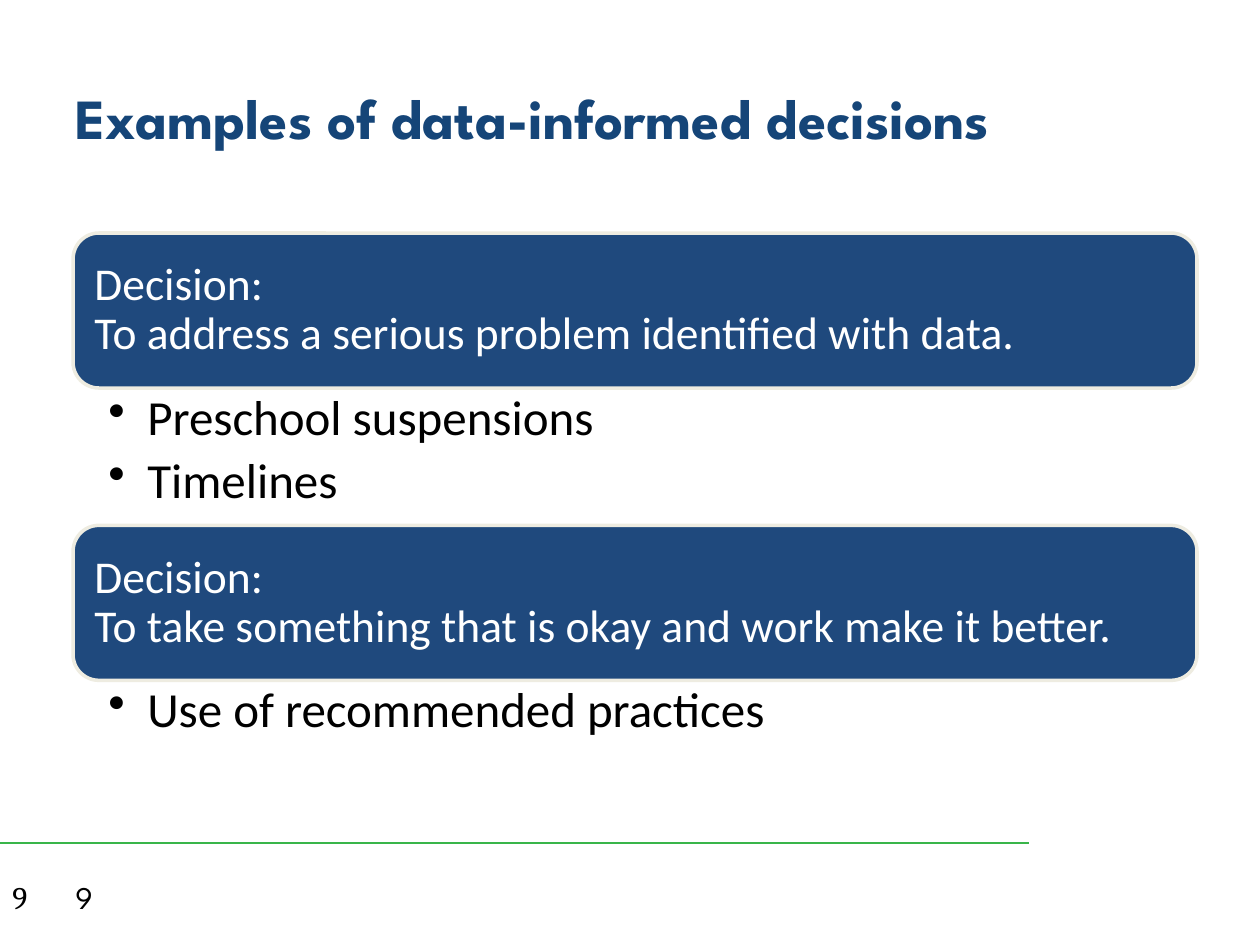
from lxml.etree import SubElement
from pptx import Presentation
from pptx.dml.color import RGBColor
from pptx.enum.shapes import MSO_CONNECTOR, MSO_SHAPE
from pptx.enum.text import MSO_ANCHOR, PP_ALIGN
from pptx.oxml.ns import qn
from pptx.util import Inches, Pt

TITLE = "Examples of data-informed decisions"
DECISIONS = [
    ("To address a serious problem identified with data.",
     ["Preschool suspensions", "Timelines"]),
    ("To take something that is okay and work make it better.",
     ["Use of recommended practices"]),
]
PAGE_NUMBERS = [(0.5, "League Spartan"), (0, "Cambria")]

NAVY, TITLE_BLUE, CREAM, GREEN = "1F497D", "154578", "EEECE1", "39B54A"
WHITE, BLACK = "FFFFFF", "000000"
LEFT, TOP, WIDTH = 0.58, 1.85, 8.92
BAR_HEIGHT, LIST_HEIGHT = 1.23, 1.09


def rgb(color):
    return RGBColor.from_string(color)


def set_font(paragraph, name, size, color, bold=False):
    font = paragraph.font
    font.name, font.size, font.bold = name, Pt(size), bold
    font.color.rgb = rgb(color)


def set_frame(shape, anchor, insets=(0.1, 0.05, 0.1, 0.05)):
    """Wrap the text, anchor it and set left, top, right and bottom insets."""
    frame = shape.text_frame
    frame.word_wrap = True
    frame.vertical_anchor = anchor
    (frame.margin_left, frame.margin_top,
     frame.margin_right, frame.margin_bottom) = map(Inches, insets)
    return frame


def add_label(slide, box, text, name, size, color, bold=False):
    label = slide.shapes.add_textbox(*map(Inches, box))
    paragraph = set_frame(label, MSO_ANCHOR.MIDDLE).paragraphs[0]
    paragraph.text = text
    set_font(paragraph, name, size, color, bold)


def add_bullet(paragraph):
    properties = paragraph._p.get_or_add_pPr()
    properties.set("marL", str(Inches(0.31)))
    properties.set("indent", str(Inches(-0.31)))
    SubElement(properties, qn("a:buChar")).set("char", "•")


def add_decision_bar(slide, top, decision):
    bar = slide.shapes.add_shape(
        MSO_SHAPE.ROUNDED_RECTANGLE,
        *map(Inches, (LEFT, top, WIDTH, BAR_HEIGHT)))
    bar.shadow.inherit = False
    bar.fill.solid()
    bar.fill.fore_color.rgb = rgb(NAVY)
    bar.line.color.rgb = rgb(CREAM)
    bar.line.width = Pt(2)
    paragraph = set_frame(bar, MSO_ANCHOR.MIDDLE, (0.11,) * 4).paragraphs[0]
    paragraph.text = f"Decision:\v{decision}"
    paragraph.alignment = PP_ALIGN.LEFT
    paragraph.line_spacing = 0.9
    set_font(paragraph, "Calibri", 26, WHITE)


def add_examples(slide, top, examples):
    box = slide.shapes.add_textbox(
        *map(Inches, (LEFT, top, WIDTH, LIST_HEIGHT)))
    frame = set_frame(box, MSO_ANCHOR.TOP, (0.28, 0.04, 0.22, 0.04))
    for i, example in enumerate(examples):
        paragraph = frame.add_paragraph() if i else frame.paragraphs[0]
        paragraph.text = example
        add_bullet(paragraph)
        paragraph.line_spacing = 0.9
        paragraph.space_after = Pt(5.6)
        set_font(paragraph, "Calibri", 28, BLACK)


def main():
    prs = Presentation()
    prs.slide_width, prs.slide_height = Inches(10), Inches(7.5)
    slide = prs.slides.add_slide(prs.slide_layouts[6])

    rule = slide.shapes.add_connector(
        MSO_CONNECTOR.STRAIGHT, *map(Inches, (0, 6.69, 8.17, 6.69)))
    rule.line.color.rgb = rgb(GREEN)
    rule.line.width = Pt(1.5)
    SubElement(rule._element.spPr, qn("a:effectLst"))

    for left, font_name in PAGE_NUMBERS:
        add_label(slide, (left, 6.92, 2.33, 0.4), "9", font_name, 18, BLACK)
    add_label(slide, (0.5, 0.3, 9, 1.25), TITLE,
              "League Spartan", 32.4, TITLE_BLUE, bold=True)

    for i, (decision, examples) in enumerate(DECISIONS):
        top = TOP + i * (BAR_HEIGHT + LIST_HEIGHT)
        add_decision_bar(slide, top, decision)
        add_examples(slide, top + BAR_HEIGHT, examples)

    prs.save("out.pptx")


if __name__ == "__main__":
    main()
